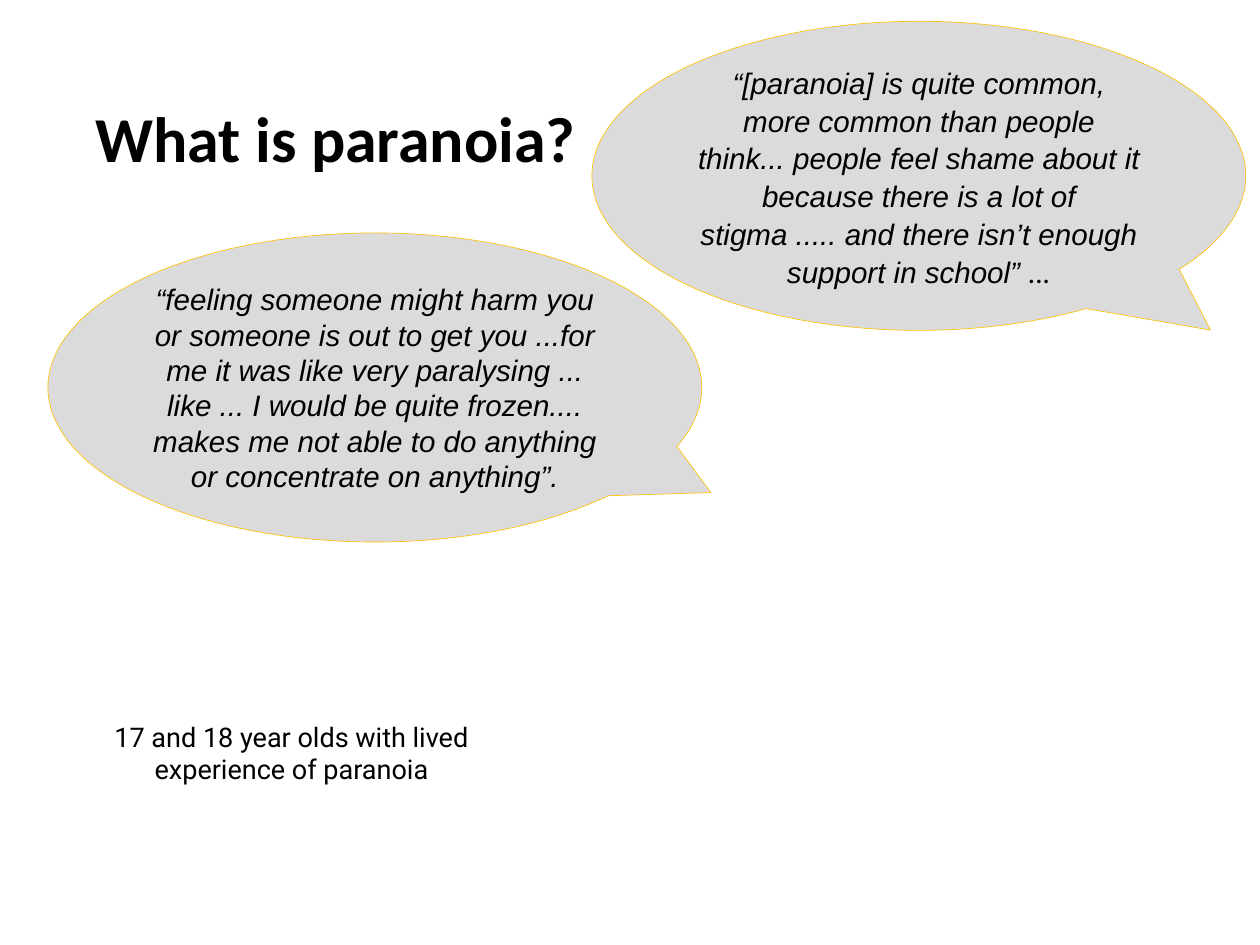
from dataclasses import dataclass

from pptx import Presentation
from pptx.dml.color import RGBColor
from pptx.enum.shapes import MSO_SHAPE
from pptx.enum.text import MSO_ANCHOR, MSO_AUTO_SIZE, PP_ALIGN
from pptx.util import Inches, Pt

BUBBLE = MSO_SHAPE.OVAL_CALLOUT
MIDDLE, TOP = MSO_ANCHOR.MIDDLE, MSO_ANCHOR.TOP
LEFT, CENTER = PP_ALIGN.LEFT, PP_ALIGN.CENTER
NO_AUTOFIT = MSO_AUTO_SIZE.NONE
TITLE_ONLY = 5


@dataclass(frozen=True)
class Theme:
    """Colours, fonts and type sizes of the slide."""
    ink: RGBColor = RGBColor(0, 0, 0)
    bubble: RGBColor = RGBColor(0xDB, 0xDB, 0xDB)
    outline: RGBColor = RGBColor(0xFF, 0xC0, 0x00)
    heading_font: str = "Calibri"
    quote_font: str = "Arial"
    source_font: str = "Roboto"
    heading_size: int = 52
    quote_size: int = 24
    source_size: int = 22


THEME = Theme()
BUBBLE_SIZE = (7.38, 3.49)
FEELING_QUOTE = (
    "“feeling someone might harm you or someone is out to get you ...for me it was "
    "like very paralysing ... like ... I would be quite frozen.... makes me not able "
    "to do anything or concentrate on anything”."
)
COMMON_QUOTE = (
    "“[paranoia] is quite common, more common than people think... people feel shame "
    "about it because there is a lot of stigma ..... and there isn’t enough support "
    "in school” "
)


def format_run(run, font, size, bold=False, italic=False):
    """Give a run its typeface, size and style."""
    run.font.name = font
    run.font.size = Pt(size)
    run.font.bold = bold
    run.font.italic = italic
    run.font.color.rgb = THEME.ink


def place(shape, box):
    """Move a shape into a box of left, top, width and height in inches."""
    shape.left, shape.top, shape.width, shape.height = map(Inches, box)


def add_heading(slide, box, text):
    """Fill the title placeholder."""
    heading = slide.shapes.title
    place(heading, box)
    frame = heading.text_frame
    frame.text = text
    frame.auto_size = NO_AUTOFIT
    frame.vertical_anchor = MIDDLE
    paragraph = frame.paragraphs[0]
    paragraph.alignment = LEFT
    paragraph.line_spacing = 0.9
    format_run(paragraph.runs[0], THEME.heading_font, THEME.heading_size, bold=True)


def add_quote(slide, box, text, tail):
    """Draw a speech bubble with its quote and return the paragraph."""
    bubble = slide.shapes.add_shape(BUBBLE, *map(Inches, box))
    bubble.adjustments[0], bubble.adjustments[1] = tail
    bubble.shadow.inherit = False
    bubble.fill.solid()
    bubble.fill.fore_color.rgb = THEME.bubble
    bubble.line.color.rgb = THEME.outline
    bubble.line.width = Pt(0.5)
    frame = bubble.text_frame
    frame.text = text
    frame.word_wrap = True
    frame.vertical_anchor = MIDDLE
    quote = frame.paragraphs[0]
    quote.alignment = CENTER
    format_run(quote.runs[0], THEME.quote_font, THEME.quote_size, italic=True)
    return quote


def add_source(slide, box, text):
    """Write who the quotes come from."""
    frame = slide.shapes.add_textbox(*map(Inches, box)).text_frame
    frame.text = text
    frame.word_wrap = True
    frame.vertical_anchor = TOP
    frame.margin_left = frame.margin_right = frame.margin_top = frame.margin_bottom = 0
    source = frame.paragraphs[0]
    source.alignment = CENTER
    format_run(source.runs[0], THEME.source_font, THEME.source_size)


def build_paranoia_slide(slide):
    """Lay out the heading, both quotes and their source."""
    add_heading(slide, (0.98, 0.57, 12.27, 2.06), "What is paranoia?")
    add_quote(slide, (0.54, 2.63, *BUBBLE_SIZE), FEELING_QUOTE, (0.514, 0.34))
    add_source(slide, (1.17, 8.13, 4.24, 1.55),
               "17 and 18 year olds with lived experience of paranoia")
    common = add_quote(slide, (6.68, 0.24, *BUBBLE_SIZE), COMMON_QUOTE, (0.446, 0.499))
    common.line_spacing = 1.07
    common.space_after = Pt(8)
    ellipsis = common.add_run()
    ellipsis.text = "..."
    format_run(ellipsis, THEME.heading_font, THEME.quote_size, italic=True)


def main():
    """Build and save the presentation."""
    deck = Presentation()
    deck.slide_width, deck.slide_height = Inches(14.22), Inches(10.67)
    build_paranoia_slide(deck.slides.add_slide(deck.slide_layouts[TITLE_ONLY]))
    deck.save("out.pptx")


if __name__ == "__main__":
    main()
